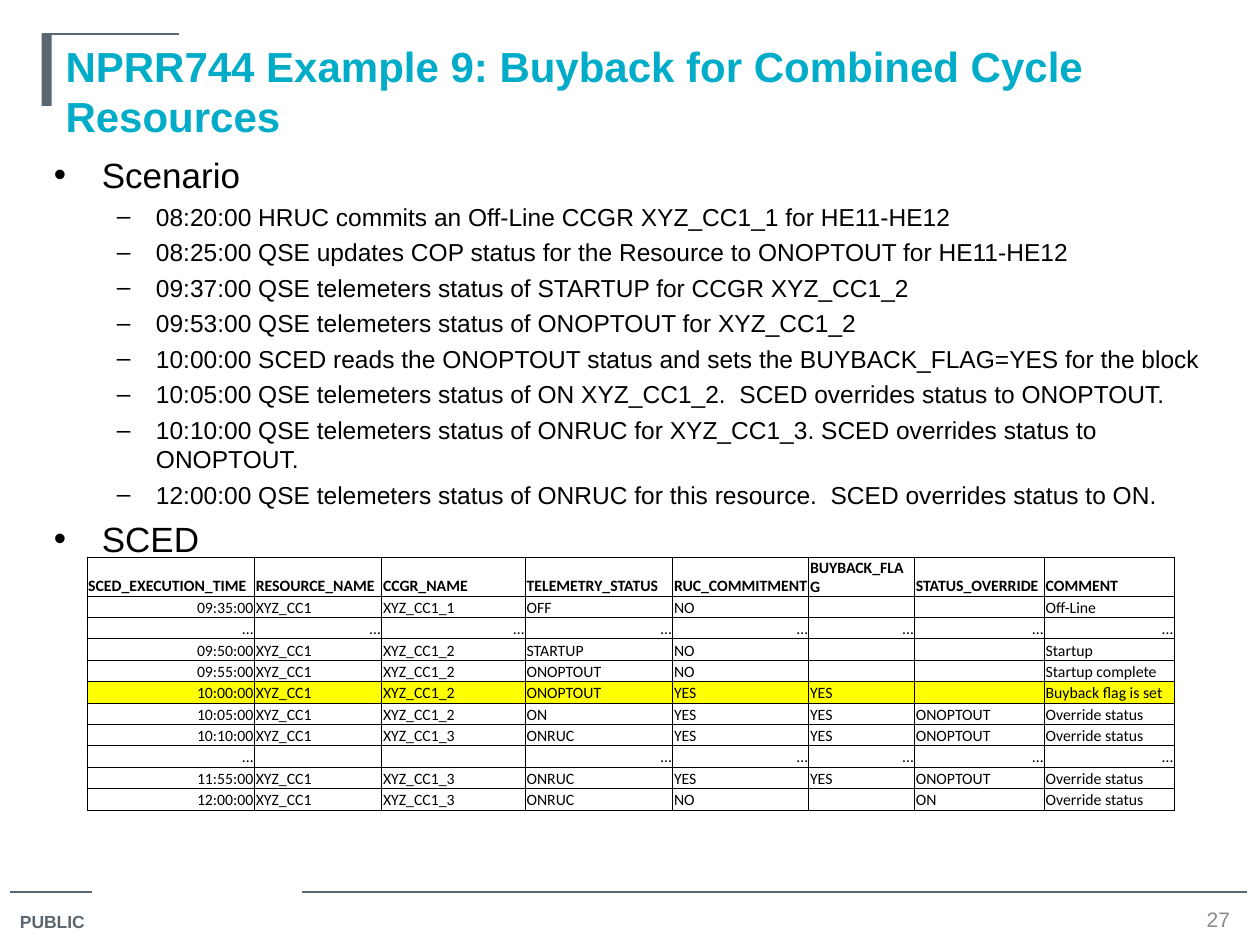
from pptx import Presentation
from pptx.dml.color import RGBColor
from pptx.enum.shapes import MSO_CONNECTOR, MSO_SHAPE
from pptx.enum.text import MSO_ANCHOR, MSO_AUTO_SIZE, PP_ALIGN
from pptx.oxml.ns import qn
from pptx.util import Inches, Pt
from lxml.etree import SubElement

# Content
TITLE = "NPRR744 Example 9: Buyback for Combined Cycle Resources"
SCENARIO = [
    "08:20:00 HRUC commits an Off-Line CCGR XYZ_CC1_1 for HE11-HE12",
    "08:25:00 QSE updates COP status for the Resource to ONOPTOUT for HE11-HE12",
    "09:37:00 QSE telemeters status of STARTUP for CCGR XYZ_CC1_2",
    "09:53:00 QSE telemeters status of ONOPTOUT for XYZ_CC1_2",
    "10:00:00 SCED reads the ONOPTOUT status and sets the BUYBACK_FLAG=YES for the block",
    "10:05:00 QSE telemeters status of ON XYZ_CC1_2.  SCED overrides status to ONOPTOUT.",
    "10:10:00 QSE telemeters status of ONRUC for XYZ_CC1_3. SCED overrides status to ONOPTOUT.",
    "12:00:00 QSE telemeters status of ONRUC for this resource.  SCED overrides status to ON.",
]
OUTLINE = [("Scenario", 0), *((step, 1) for step in SCENARIO), ("SCED", 0)]
UNIT = "XYZ_CC1"
ROWS = [
    ("SCED_EXECUTION_TIME", "RESOURCE_NAME", "CCGR_NAME", "TELEMETRY_STATUS",
     "RUC_COMMITMENT", "BUYBACK_FLAG", "STATUS_OVERRIDE", "COMMENT"),
    ("09:35:00", UNIT, "XYZ_CC1_1", "OFF", "NO", "", "", "Off-Line"),
    ("…",) * 8,
    ("09:50:00", UNIT, "XYZ_CC1_2", "STARTUP", "NO", "", "", "Startup"),
    ("09:55:00", UNIT, "XYZ_CC1_2", "ONOPTOUT", "NO", "", "", "Startup complete"),
    ("10:00:00", UNIT, "XYZ_CC1_2", "ONOPTOUT", "YES", "YES", "", "Buyback flag is set"),
    ("10:05:00", UNIT, "XYZ_CC1_2", "ON", "YES", "YES", "ONOPTOUT", "Override status"),
    ("10:10:00", UNIT, "XYZ_CC1_3", "ONRUC", "YES", "YES", "ONOPTOUT", "Override status"),
    ("…", "", "", "…", "…", "…", "…", "…"),
    ("11:55:00", UNIT, "XYZ_CC1_3", "ONRUC", "YES", "YES", "ONOPTOUT", "Override status"),
    ("12:00:00", UNIT, "XYZ_CC1_3", "ONRUC", "NO", "", "ON", "Override status"),
]
HIGHLIGHTED_ROW = 5

# Style: bullet, size, left margin and hanging indent for each outline level
LEVELS = [("•", 20, 0.38, 0.38), ("–", 14, 0.81, 0.31)]
COLUMN_WIDTHS = [1.33, 1.01, 1.14, 1.17, 1.08, 0.84, 1.03, 1.03]
HEADER_HEIGHT, ROW_HEIGHT = 0.31, 0.17
TABLE_LEFT, TABLE_TOP = 0.69, 4.42
RULES = [(0.08, 0.73, 7.08), (2.4, 9.9, 7.08), (0.33, 1.42, 0.27)]
SLATE = RGBColor(0x5B, 0x67, 0x70)
TEAL = RGBColor(0x00, 0xAC, 0xC8)
GRAY = RGBColor(0x8C, 0x8C, 0x8C)
BLACK = RGBColor(0x00, 0x00, 0x00)
YELLOW = RGBColor(0xFF, 0xFF, 0x00)


def style(paragraph, size, color, bold=False, name="Arial"):
    font = paragraph.font
    font.name, font.size, font.bold = name, Pt(size), bold
    font.color.rgb = color


def add_rule(page, left, right, y):
    rule = page.shapes.add_connector(
        MSO_CONNECTOR.STRAIGHT, Inches(left), Inches(y), Inches(right), Inches(y))
    rule.line.color.rgb = SLATE
    rule.line.width = Pt(0.75)
    SubElement(rule._element.spPr, qn("a:effectLst"))


def add_box(page, left, top, width, height, wrap=True):
    box = page.shapes.add_textbox(*map(Inches, (left, top, width, height)))
    box.text_frame.word_wrap = wrap
    return box.text_frame


def add_label(page, area, text, size, color, bold=False, align=PP_ALIGN.LEFT):
    frame = add_box(page, *area, wrap=False)
    frame.vertical_anchor = MSO_ANCHOR.MIDDLE
    paragraph = frame.paragraphs[0]
    paragraph.text, paragraph.alignment = text, align
    style(paragraph, size, color, bold)


def add_outline(page):
    frame = add_box(page, 0.33, 1.17, 9.33, 3.06)
    for index, (text, level) in enumerate(OUTLINE):
        bullet, size, margin, hanging = LEVELS[level]
        paragraph = frame.add_paragraph() if index else frame.paragraphs[0]
        paragraph.text, paragraph.level = text, level
        if index:
            paragraph.space_before = Pt(size / 4)
        properties = paragraph._p.get_or_add_pPr()
        properties.set("marL", str(Inches(margin)))
        properties.set("indent", str(-Inches(hanging)))
        SubElement(properties, qn("a:buFont"), typeface="Arial")
        SubElement(properties, qn("a:buChar"), char=bullet)
        style(paragraph, size, BLACK)


def add_borders(cell):
    properties = cell._tc.get_or_add_tcPr()
    for position, side in enumerate(("lnL", "lnR", "lnT", "lnB")):
        line = SubElement(properties, qn(f"a:{side}"), w=str(Pt(0.5)))
        fill = SubElement(line, qn("a:solidFill"))
        SubElement(fill, qn("a:srgbClr"), val=str(BLACK))
        properties.insert(position, line)


def fill_cell(cell, text, row, column):
    cell.margin_left = cell.margin_right = cell.margin_top = Inches(0.01)
    cell.margin_bottom = 0
    cell.vertical_anchor = MSO_ANCHOR.BOTTOM
    if row == HIGHLIGHTED_ROW:
        cell.fill.solid()
        cell.fill.fore_color.rgb = YELLOW
    else:
        cell.fill.background()
    add_borders(cell)
    paragraph = cell.text_frame.paragraphs[0]
    if text:
        paragraph.text = text
    else:
        SubElement(paragraph._p, qn("a:endParaRPr"), sz="900")
    if row and (column == 0 or text == "…"):
        paragraph.alignment = PP_ALIGN.RIGHT
    style(paragraph, 9, BLACK, row == 0, "Calibri")


def add_status_table(page):
    heights = [HEADER_HEIGHT] + [ROW_HEIGHT] * (len(ROWS) - 1)
    table = page.shapes.add_table(
        len(ROWS), len(COLUMN_WIDTHS), Inches(TABLE_LEFT), Inches(TABLE_TOP),
        Inches(sum(COLUMN_WIDTHS)), Inches(sum(heights))).table
    table.first_row = table.horz_banding = False
    for column, width in zip(table.columns, COLUMN_WIDTHS):
        column.width = Inches(width)
    for row, (values, height) in enumerate(zip(ROWS, heights)):
        table.rows[row].height = Inches(height)
        for column, text in enumerate(values):
            fill_cell(table.cell(row, column), text, row, column)


def main():
    deck = Presentation()
    deck.slide_width, deck.slide_height = Inches(10), Inches(7.5)
    page = deck.slides.add_slide(deck.slide_layouts[5])

    # Frame lines and accent bar
    for rule in RULES:
        add_rule(page, *rule)
    bar = page.shapes.add_shape(
        MSO_SHAPE.RECTANGLE, *map(Inches, (0.33, 0.27, 0.08, 0.57)))
    bar.shadow.inherit = False
    bar.fill.solid()
    bar.fill.fore_color.rgb = SLATE
    bar.line.fill.background()

    # Title
    title = page.shapes.title
    title.left, title.top, title.width, title.height = map(Inches, (0.42, 0.27, 9.25, 1.25))
    frame = title.text_frame
    frame.text = TITLE
    frame.word_wrap, frame.auto_size = True, MSO_AUTO_SIZE.NONE
    frame.vertical_anchor = MSO_ANCHOR.TOP
    frame.paragraphs[0].alignment = PP_ALIGN.LEFT
    style(frame.paragraphs[0], 24, TEAL, bold=True)

    # Body and footer
    add_outline(page)
    add_status_table(page)
    add_label(page, (0.06, 7.17, 0.77, 0.28), "PUBLIC", 10, SLATE, bold=True)
    add_label(page, (9.42, 7.18, 0.5, 0.23), "27", 12, GRAY, align=PP_ALIGN.CENTER)
    deck.save("out.pptx")


if __name__ == "__main__":
    main()
